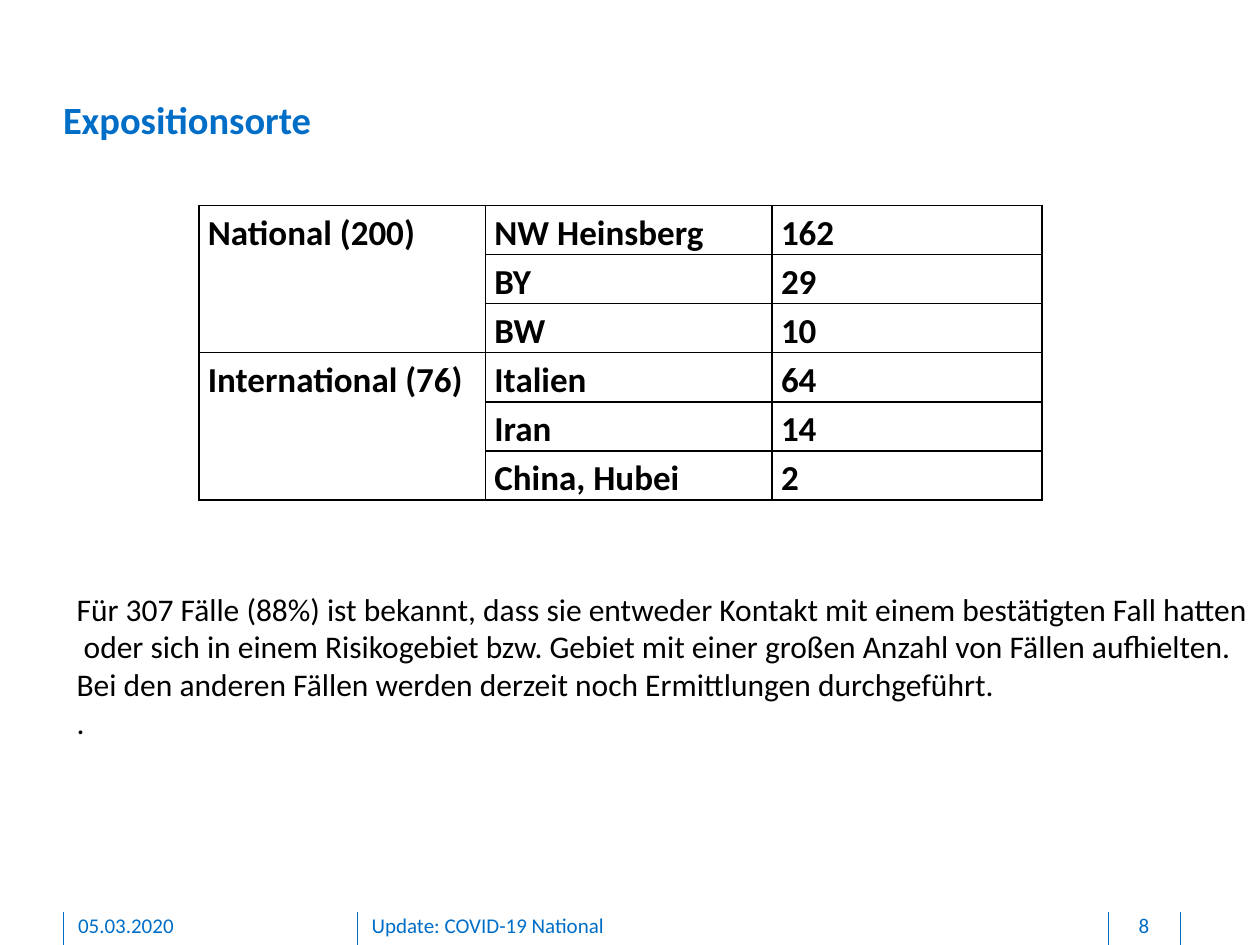
from dataclasses import dataclass

from lxml.etree import SubElement
from pptx import Presentation
from pptx.dml.color import RGBColor
from pptx.enum.shapes import MSO_CONNECTOR
from pptx.enum.text import MSO_ANCHOR, MSO_AUTO_SIZE, PP_ALIGN
from pptx.oxml.ns import qn
from pptx.util import Inches, Pt


@dataclass(frozen=True)
class Theme:
    face: str = "Calibri"
    blue: str = "006EC7"
    black: str = "000000"
    title: int = 22
    table: int = 20
    body: int = 18
    foot: int = 12


THEME = Theme()
COLS, ROWS = 100, 75
WIDE, HIGH = Inches(10), Inches(7.5)

PLACES = [
    ("National (200)", [("NW Heinsberg", 162), ("BY", 29), ("BW", 10)]),
    ("International (76)", [("Italien", 64), ("Iran", 14), ("China, Hubei", 2)]),
]
NOTES = [
    "Für 307 Fälle (88%) ist bekannt, dass sie entweder Kontakt mit einem bestätigten Fall hatten",
    " oder sich in einem Risikogebiet bzw. Gebiet mit einer großen Anzahl von Fällen aufhielten.",
    "Bei den anderen Fällen werden derzeit noch Ermittlungen durchgeführt.",
    ".",
]


def grid(left, top, width, height):
    """Turn grid columns and rows into slide lengths."""
    across, down = WIDE / COLS, HIGH / ROWS
    return [round(n * unit) for n, unit in
            zip((left, top, width, height), (across, down, across, down))]


def put(item, values):
    for name, value in values.items():
        setattr(item, name, value)


def inset(item, left=0, top=0, right=0, bottom=0):
    put(item, {"margin_left": Inches(left), "margin_top": Inches(top),
               "margin_right": Inches(right), "margin_bottom": Inches(bottom)})


def write(frame, lines, size, color, bold=False, **format):
    """Fill a text frame with one paragraph per line."""
    for i, line in enumerate(lines):
        para = frame.add_paragraph() if i else frame.paragraphs[0]
        put(para, {"alignment": PP_ALIGN.LEFT, **format})
        run = para.add_run()
        run.text = line
        put(run.font, {"name": THEME.face, "size": Pt(size), "bold": bold})
        run.font.color.rgb = RGBColor.from_string(color)


def add_title(slide, box, text):
    title = slide.shapes.title
    put(title, dict(zip(("left", "top", "width", "height"), box)))
    frame = title.text_frame
    put(frame, {"word_wrap": True, "vertical_anchor": MSO_ANCHOR.TOP,
                "auto_size": MSO_AUTO_SIZE.SHAPE_TO_FIT_TEXT})
    inset(frame)
    write(frame, [text], THEME.title, THEME.blue, True)


def frame_cell(cell):
    """Draw all four borders of a cell, then clear its fill."""
    props = cell._tc.get_or_add_tcPr()
    for side in ("lnL", "lnR", "lnT", "lnB"):
        edge = SubElement(props, qn(f"a:{side}"), w=str(Pt(1)))
        fill = SubElement(edge, qn("a:solidFill"))
        SubElement(fill, qn("a:srgbClr"), val=THEME.black)
    cell.fill.background()


def add_places(slide, box, shares):
    count = sum(len(rows) for _, rows in PLACES)
    table = slide.shapes.add_table(count, len(shares), *box).table
    put(table, {"first_row": False, "horz_banding": False})
    for col, share in zip(table.columns, shares):
        col.width = round(box[2] * share)
    for cell in table.iter_cells():
        inset(cell, left=0.07, right=0.07)
        frame_cell(cell)

    def fill(row, col, text):
        write(table.cell(row, col).text_frame, [text], THEME.table, THEME.black,
              True, line_spacing=1.15, space_after=Pt(6))

    start = 0
    for group, rows in PLACES:
        table.cell(start, 0).merge(table.cell(start + len(rows) - 1, 0))
        fill(start, 0, group)
        for row, (place, cases) in enumerate(rows, start):
            fill(row, 1, place)
            fill(row, 2, str(cases))
        start += len(rows)


def add_notes(slide, box):
    frame = slide.shapes.add_textbox(*box).text_frame
    put(frame, {"word_wrap": False, "auto_size": MSO_AUTO_SIZE.SHAPE_TO_FIT_TEXT})
    write(frame, NOTES, THEME.body, THEME.black)


def add_rule(slide, x, top, end):
    line = slide.shapes.add_connector(MSO_CONNECTOR.STRAIGHT, x, top, x, end)
    line.line.width = Pt(0.5)
    line.line.color.rgb = RGBColor.from_string(THEME.blue)
    SubElement(line._element.spPr, qn("a:effectLst"))


def add_footer(slide, box):
    left, top, width, height = box
    for share in (0.05, 0.284, 0.88, 0.937):
        add_rule(slide, left + round(width * share), top, top + height)
    parts = [
        (0.062, 0.203, "05.03.2020", PP_ALIGN.LEFT),
        (0.295, 0.567, "Update: COVID-19 National", PP_ALIGN.LEFT),
        (0.881, 0.054, "8", PP_ALIGN.CENTER),
    ]
    for start, share, text, align in parts:
        frame = slide.shapes.add_textbox(
            left + round(width * start), top, round(width * share),
            round(height * 0.8)).text_frame
        frame.word_wrap = True
        inset(frame, bottom=0.05)
        write(frame, [text], THEME.foot, THEME.blue, alignment=align)


def main():
    deck = Presentation()
    put(deck, {"slide_width": WIDE, "slide_height": HIGH})
    slide = deck.slides.add_slide(deck.slide_layouts[5])
    add_title(slide, grid(5, 7.6, 88.5, 3.7), "Expositionsorte")
    add_places(slide, grid(15.8, 16.3, 66.9, 23.4), (0.34, 0.34, 0.32))
    add_notes(slide, grid(5.1, 46.3, 96.1, 16.2))
    add_footer(slide, grid(0, 72.4, COLS, 2.6))
    deck.save("out.pptx")


if __name__ == "__main__":
    main()
